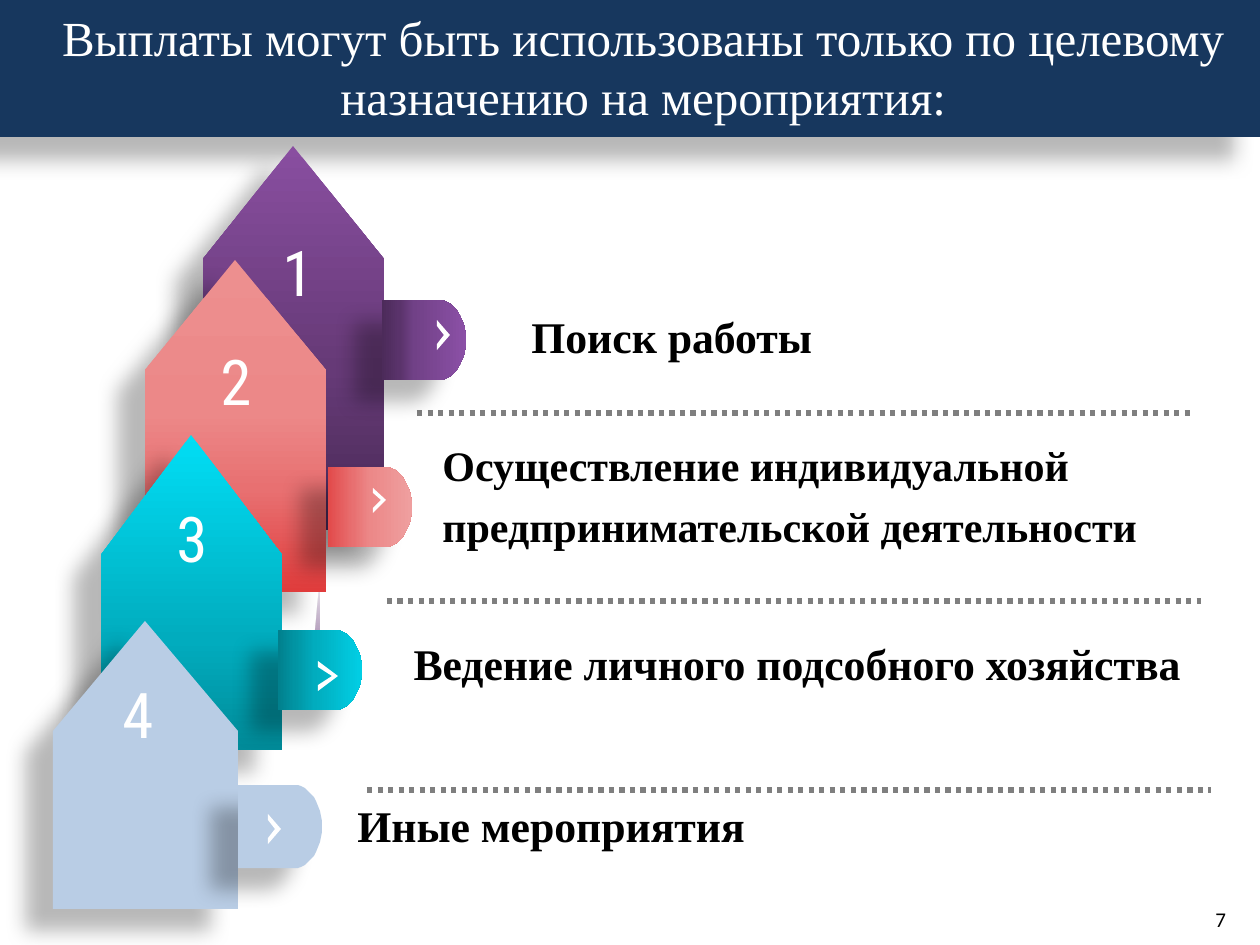
from math import cos, pi, sin

from lxml import etree
from pptx import Presentation
from pptx.dml.color import RGBColor
from pptx.enum.dml import MSO_LINE
from pptx.enum.shapes import MSO_CONNECTOR, MSO_SHAPE
from pptx.enum.text import MSO_ANCHOR, MSO_AUTO_SIZE, PP_ALIGN
from pptx.oxml.ns import qn
from pptx.util import Pt

PX = 914400 / 126
TITLE_ONLY = 5
CENTER, LEFT = PP_ALIGN.CENTER, PP_ALIGN.LEFT


class Theme:
    navy, white, black = "17375E", "FFFFFF", "000000"
    dots, pale_blue = "7F7F7F", "B9CDE5"
    serif, digits, sans = "Times New Roman", "Roboto Condensed", "Calibri"
    title_size, digit_size, item_size, long_item_size, page_size = 28, 36, 25, 24, 12


def px(*lengths):
    return [round(length * PX) for length in lengths]


def write(frame, text, size, font=Theme.serif, color=Theme.black, bold=False,
          align=LEFT, hanging=False, before=0, shadow=False, wrap=True):
    """Fill the frame with one paragraph per line of text."""
    frame.word_wrap = wrap
    frame.auto_size = MSO_AUTO_SIZE.NONE
    frame.vertical_anchor = MSO_ANCHOR.TOP
    for index, line in enumerate(text.split("\n")):
        paragraph = frame.add_paragraph() if index else frame.paragraphs[0]
        paragraph.alignment = align
        paragraph.space_before = Pt(before)
        if hanging:
            margin, indent = px(111, -63)
            properties = paragraph._p.get_or_add_pPr()
            properties.set("marL", str(margin))
            properties.set("indent", str(indent))
        run = paragraph.add_run()
        run.text = line
        run.font.size, run.font.name, run.font.bold = Pt(size), font, bold
        run.font.color.rgb = RGBColor.from_string(color)
        if shadow:
            effects = etree.Element(qn("a:effectLst"))
            add_shadow(effects, blur=4, distance=3, angle=90, opacity=45)
            run._r.rPr.find(qn("a:solidFill")).addnext(effects)


def add_shadow(effects, blur=12, distance=20, angle=141, opacity=28):
    outer = etree.SubElement(effects, qn("a:outerShdw"), blurRad=str(Pt(blur)),
                             dist=str(Pt(distance)), dir=str(angle * 60000),
                             algn="ctr", rotWithShape="0")
    color = etree.SubElement(outer, qn("a:srgbClr"), val=Theme.black)
    etree.SubElement(color, qn("a:alpha"), val=str(opacity * 1000))


def paint(shape, fill, angle=0, shadow=True):
    """Fill with a colour, or with gradient stops of (position, colour, opacity)."""
    shape.line.fill.background()
    shape.shadow.inherit = False
    properties = shape.element.spPr
    if shadow:
        add_shadow(properties.find(qn("a:effectLst")))
    if isinstance(fill, str):
        shape.fill.solid()
        shape.fill.fore_color.rgb = RGBColor.from_string(fill)
        return
    shape.fill.background()
    gradient = etree.Element(qn("a:gradFill"), rotWithShape="1")
    stops = etree.SubElement(gradient, qn("a:gsLst"))
    for position, color, *opacity in fill:
        stop = etree.SubElement(stops, qn("a:gs"), pos=str(position * 1000))
        stop_color = etree.SubElement(stop, qn("a:srgbClr"), val=color)
        for value in opacity:
            etree.SubElement(stop_color, qn("a:alpha"), val=str(value * 1000))
    etree.SubElement(gradient, qn("a:lin"), ang=str(angle * 60000), scaled="0")
    properties.replace(properties.find(qn("a:noFill")), gradient)


def add_outline(points, fill, angle=0, shadow=True):
    builder = slide.shapes.build_freeform(*points[0], scale=PX)
    builder.add_line_segments(points[1:], close=True)
    paint(builder.convert_to_shape(), fill, angle, shadow)


presentation = Presentation()
presentation.slide_width, presentation.slide_height = px(1260, 945)
slide = presentation.slides.add_slide(presentation.slide_layouts[TITLE_ONLY])

# Title band
band = slide.shapes.add_shape(MSO_SHAPE.RECTANGLE, *px(0, 0, 1260, 137))
paint(band, Theme.navy)
title = slide.shapes.title
title.left, title.top, title.width, title.height = px(8, 1, 1270, 131)
write(title.text_frame, "Выплаты могут быть использованы только по целевому назначению на мероприятия:",
      Theme.title_size, color=Theme.white, align=CENTER)
band.element.addnext(title.element)

# Dotted separators
for left, right, y in [(417, 1190, 413), (387, 1201, 601), (367, 1211, 790)]:
    separator = slide.shapes.add_connector(MSO_CONNECTOR.STRAIGHT, *px(left, y, right, y))
    separator.line.color.rgb = RGBColor.from_string(Theme.dots)
    separator.line.width = Pt(3)
    separator.line.dash_style = MSO_LINE.ROUND_DOT
    etree.SubElement(separator._element.spPr, qn("a:effectLst"))

# Fading sliver behind the second house
add_outline([(319, 670), (312, 670), (319, 573)],
            [(0, "663A77", 100), (36, "663A77", 50), (64, "663A77", 30), (100, "663A77", 0)],
            angle=270, shadow=False)

# Houses: left, top, width, shoulder, bottom, fill
houses = [
    (203, 146, 181, 259, 530, [(0, "894EA0"), (58, "663A77"), (100, "482955")]),
    (145, 260, 181, 370, 592, [(0, "ED8F8F"), (46, "EC8888"), (69, "E87071"), (100, "E03C3C")]),
    (101, 435, 181, 555, 750, [(0, "01DEF5"), (65, "01ACBE"), (100, "018B99")]),
    (53, 621, 185, 731, 909, Theme.pale_blue),
]
for left, top, width, shoulder, bottom, fill in houses:
    right = left + width
    add_outline([(left + width // 2, top), (right, shoulder), (right, bottom),
                 (left, bottom), (left, shoulder)], fill, angle=90)

# Round-ended tabs: left, top, height, fill
tabs = [
    (382, 300, 80, [(0, "4C2B5A"), (21, "5A336B"), (38, "714187"), (100, "8B50A6")]),
    (328, 467, 80, [(0, "E24A4A"), (30, "E87071"), (50, "EC8888"), (100, "EF9F9F")]),
    (278, 630, 80, [(0, "01808D"), (20, "0194A3"), (44, "01ACBE"), (100, "01CFE5")]),
    (238, 785, 83, Theme.pale_blue),
]
ARC_STEPS = 24
for left, top, height, fill in tabs:
    radius = height / 2
    angles = [pi * step / ARC_STEPS - pi / 2 for step in range(ARC_STEPS + 1)]
    arc = [(left + 56 + 28 * cos(turn), top + radius + radius * sin(turn)) for turn in angles]
    add_outline([(left, top), *arc, (left, top + height)], fill)

# Chevrons: left, top, width, height, thickness
for left, top, width, height, thickness in [
    (437, 320, 13, 30, 6), (373, 488, 13, 25, 5), (318, 661, 20, 30, 6), (268, 814, 13, 30, 6),
]:
    middle, bottom = top + height / 2, top + height
    add_outline([(left, top), (left + width, middle), (left, bottom), (left, bottom - thickness),
                 (left + width - thickness, middle), (left, top + thickness)],
                Theme.white, shadow=False)

# House numbers, items and page number
number = dict(size=Theme.digit_size, font=Theme.digits, color=Theme.white)
item = dict(size=Theme.item_size, bold=True)
texts = [
    ("1", (270, 227, 123, 84), number),
    ("2", (208, 336, 69, 86), number),
    ("3", (164, 493, 123, 84), number),
    ("4", (110, 669, 123, 89), number),
    ("Поиск работы", (519, 304, 309, 66), dict(item, wrap=False)),
    ("Осуществление индивидуальной\nпредпринимательской деятельности", (382, 433, 839, 125),
     dict(item, size=Theme.long_item_size, hanging=True, before=6, shadow=True)),
    ("Ведение личного подсобного хозяйства", (348, 631, 898, 66),
     dict(item, align=CENTER, shadow=True)),
    ("Иные мероприятия", (297, 793, 465, 66), dict(item, hanging=True, wrap=False)),
    ("7", (1203, 900, 42, 38), dict(size=Theme.page_size, font=Theme.sans)),
]
for text, box, text_format in texts:
    write(slide.shapes.add_textbox(*px(*box)).text_frame, text, **text_format)

presentation.save("out.pptx")
